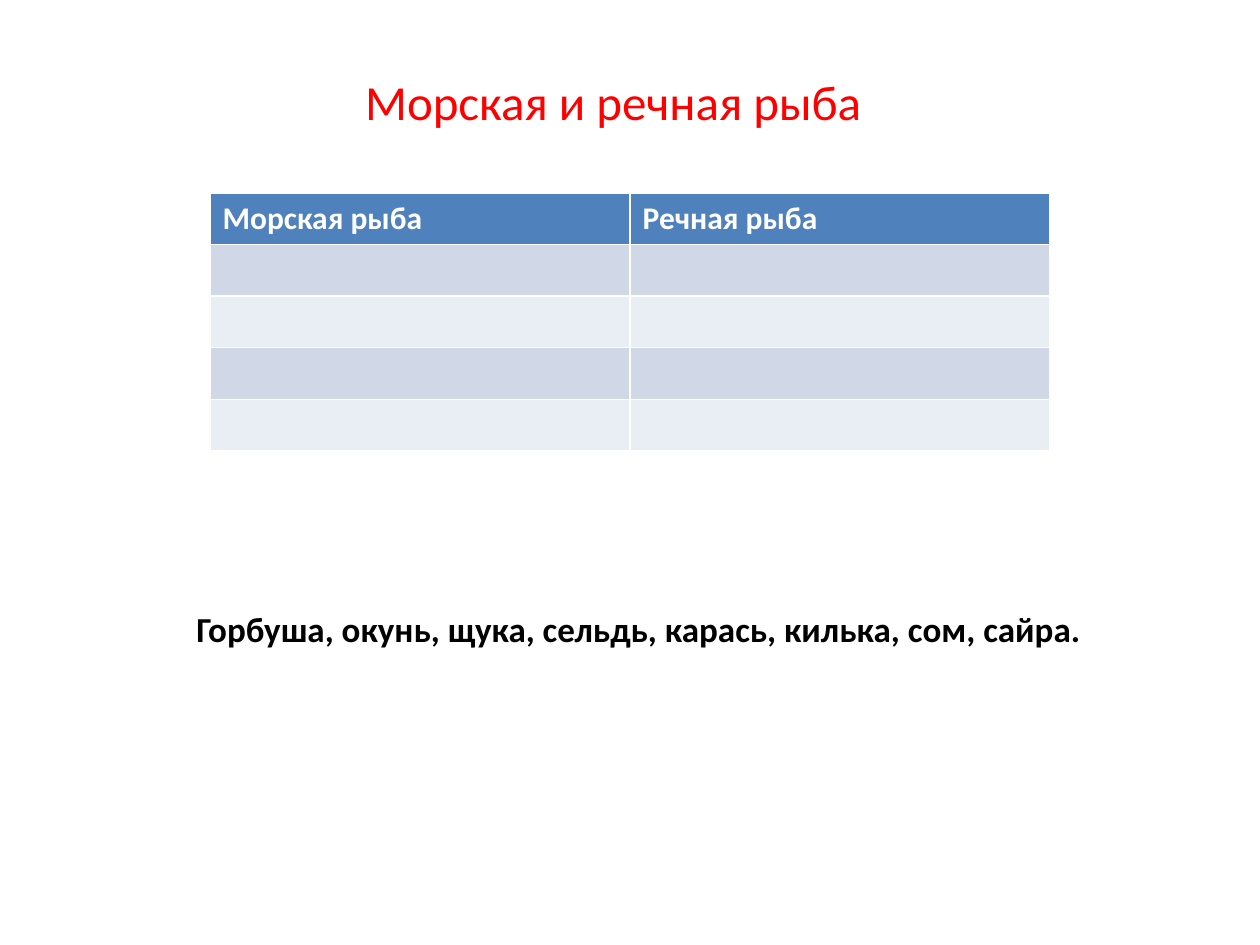
from pptx import Presentation
from pptx.dml.color import RGBColor
from pptx.enum.text import MSO_AUTO_SIZE
from pptx.util import Inches, Pt

RED = RGBColor(0xFF, 0x00, 0x00)
BLACK = RGBColor(0x00, 0x00, 0x00)
WHITE = RGBColor(0xFF, 0xFF, 0xFF)
HEADER_BLUE = RGBColor(0x4F, 0x81, 0xBD)
BAND_DARK = RGBColor(0xD0, 0xD8, 0xE8)
BAND_LIGHT = RGBColor(0xE9, 0xED, 0xF4)

FONT = "Calibri"
WIDTH, HEIGHT = Inches(10), Inches(7.5)
COL_W = WIDTH // 3
ROW_H = Inches(0.41)
EMPTY_ROWS = 4


def set_font(p, size, color, bold):
    p.font.name = FONT
    p.font.size = Pt(size)
    p.font.bold = bold
    p.font.color.rgb = color


def add_line(s, text, left, top, width, height, size, color, bold=False):
    """Add a one-line text box that fits its text."""
    sp = s.shapes.add_textbox(Inches(left), Inches(top), Inches(width), Inches(height))
    tf = sp.text_frame
    tf.word_wrap = False
    tf.auto_size = MSO_AUTO_SIZE.SHAPE_TO_FIT_TEXT
    p = tf.paragraphs[0]
    p.text = text
    set_font(p, size, color, bold)


def add_sorting_table(s, headers, top):
    """Add a centred table with a header and empty banded rows."""
    n_rows, n_cols = EMPTY_ROWS + 1, len(headers)
    width = COL_W * n_cols
    table = s.shapes.add_table(
        n_rows, n_cols, (WIDTH - width) // 2, top, width, ROW_H * n_rows
    ).table
    for i, row in enumerate(table.rows):
        fill = HEADER_BLUE if i == 0 else (BAND_LIGHT, BAND_DARK)[i % 2]
        for cell in row.cells:
            cell.fill.solid()
            cell.fill.fore_color.rgb = fill
    for cell, text in zip(table.rows[0].cells, headers):
        cell.text = text
        set_font(cell.text_frame.paragraphs[0], 18, WHITE, True)


def main():
    prs = Presentation()
    prs.slide_width, prs.slide_height = WIDTH, HEIGHT
    s = prs.slides.add_slide(prs.slide_layouts[6])

    # Title
    add_line(s, "Морская и речная рыба", 2.8, 0.52, 4.18, 0.57, 28, RED)

    # Table to fill in
    add_sorting_table(s, ["Морская рыба", "Речная рыба"], Inches(1.53))

    # Words to sort
    add_line(s, "Горбуша, окунь, щука, сельдь, карась, килька, сом, сайра.",
             1.46, 4.77, 7.27, 0.44, 20, BLACK, bold=True)

    prs.save("out.pptx")


if __name__ == "__main__":
    main()
